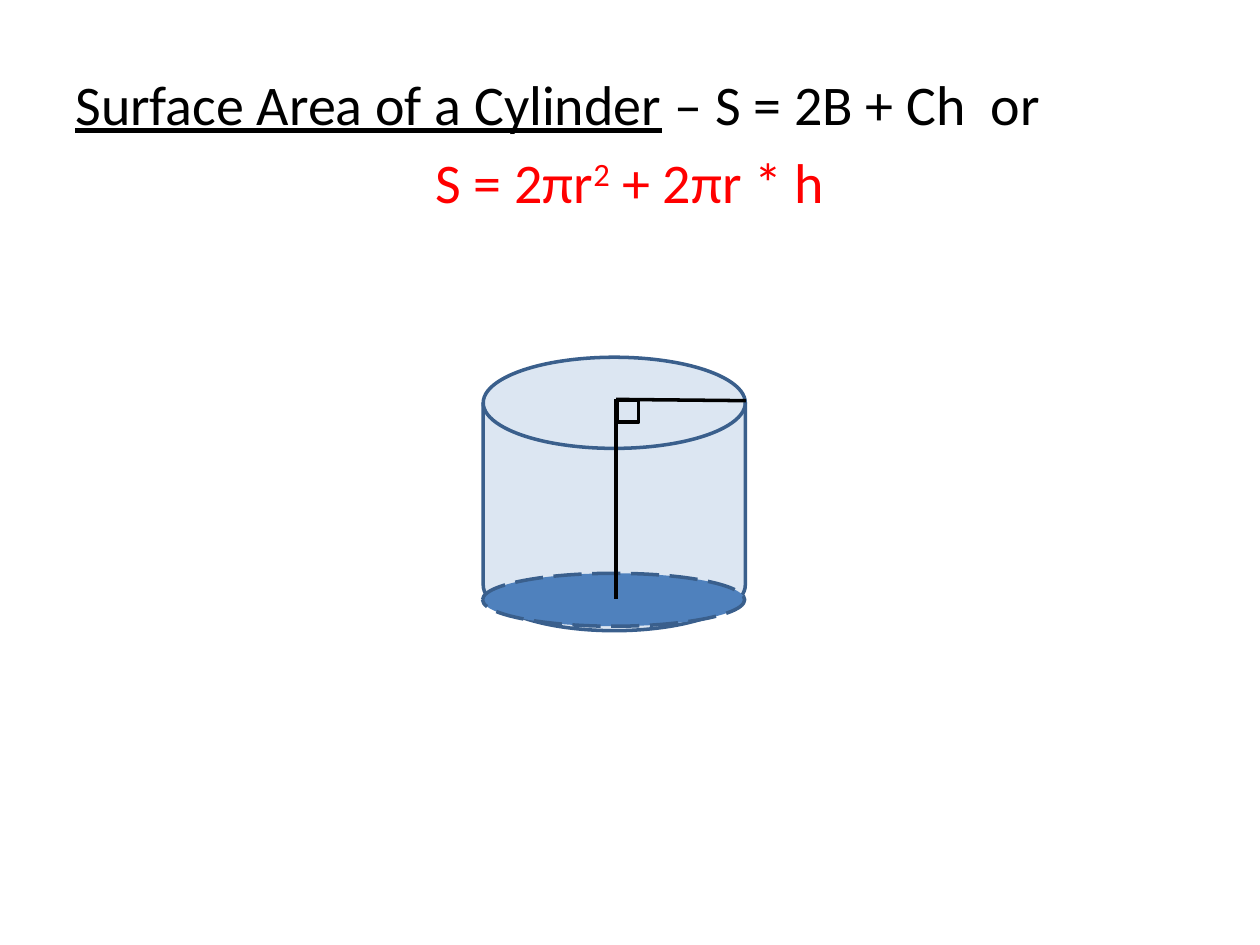
from lxml.etree import SubElement
from pptx import Presentation
from pptx.dml.color import RGBColor
from pptx.enum.dml import MSO_LINE
from pptx.enum.shapes import MSO_CONNECTOR, MSO_SHAPE
from pptx.enum.text import PP_ALIGN
from pptx.oxml.ns import qn
from pptx.util import Inches, Pt

BLACK, RED, OUTLINE = "000000", "FF0000", "3A5F8C"
PALE_BLUE, BLUE = "DCE6F2", "4F81BD"

# Content: alignment, colour, runs of (text, style)
FORMULAS = [
    (PP_ALIGN.LEFT, BLACK, [("Surface Area of a Cylinder", "underline"),
                            (" – S = 2B + Ch  or", None)]),
    (PP_ALIGN.CENTER, RED, [("S = 2πr", None), ("2", "superscript"),
                            (" + 2πr * h", None)]),
]

# Cylinder geometry in inches
AXIS_X, TOP_Y, BASE_Y = 4.89, 3.17, 4.75
RIM = (5.92, 3.18)


def color(value):
    return RGBColor.from_string(value)


def style_line(line, value):
    line.color.rgb = color(value)
    line.width = Pt(2)


def add_outlined(page, kind, place, fill, outline):
    shape = page.shapes.add_shape(kind, *map(Inches, place))
    shape.shadow.inherit = False
    if fill:
        shape.fill.solid()
        shape.fill.fore_color.rgb = color(fill)
    else:
        shape.fill.background()
    style_line(shape.line, outline)
    return shape


def add_segment(page, start, end):
    segment = page.shapes.add_connector(
        MSO_CONNECTOR.STRAIGHT, *map(Inches, start + end))
    style_line(segment.line, BLACK)
    SubElement(segment._element.spPr, qn("a:effectLst"))


def add_formulas(page):
    frame = page.shapes.add_textbox(
        Inches(0.5), Inches(0.5), Inches(9), Inches(6.2)).text_frame
    frame.word_wrap = True
    for index, (alignment, value, spans) in enumerate(FORMULAS):
        para = frame.add_paragraph() if index else frame.paragraphs[0]
        para.alignment = alignment
        para.space_before = Pt(6.4)
        properties = para._p.get_or_add_pPr()
        properties.set("marL", str(Inches(0.38)))
        properties.set("indent", str(Inches(-0.38)))
        for text, style in spans:
            span = para.add_run()
            span.text = text
            span.font.name = "Calibri"
            span.font.size = Pt(32)
            span.font.color.rgb = color(value)
            if style == "underline":
                span.font.underline = True
            elif style == "superscript":
                span.font._element.set("baseline", "30000")


deck = Presentation()
deck.slide_width, deck.slide_height = Inches(10), Inches(7.5)
page = deck.slides.add_slide(deck.slide_layouts[6])
add_formulas(page)

# Cylinder body and its dashed base
body = add_outlined(page, MSO_SHAPE.FLOWCHART_DIRECT_ACCESS_STORAGE,
                    (3.79, 2.88, 2.17, 2.08), PALE_BLUE, OUTLINE)
body.rotation = 270
base = add_outlined(page, MSO_SHAPE.OVAL, (3.83, 4.55, 2.08, 0.42), BLUE, OUTLINE)
base.line.dash_style = MSO_LINE.LONG_DASH

# Height, radius and right-angle mark
for end in ((AXIS_X, BASE_Y), RIM):
    add_segment(page, (AXIS_X, TOP_Y), end)
add_outlined(page, MSO_SHAPE.RECTANGLE,
             (AXIS_X + 0.01, TOP_Y + 0.01, 0.17, 0.17), None, BLACK)

deck.save("out.pptx")
